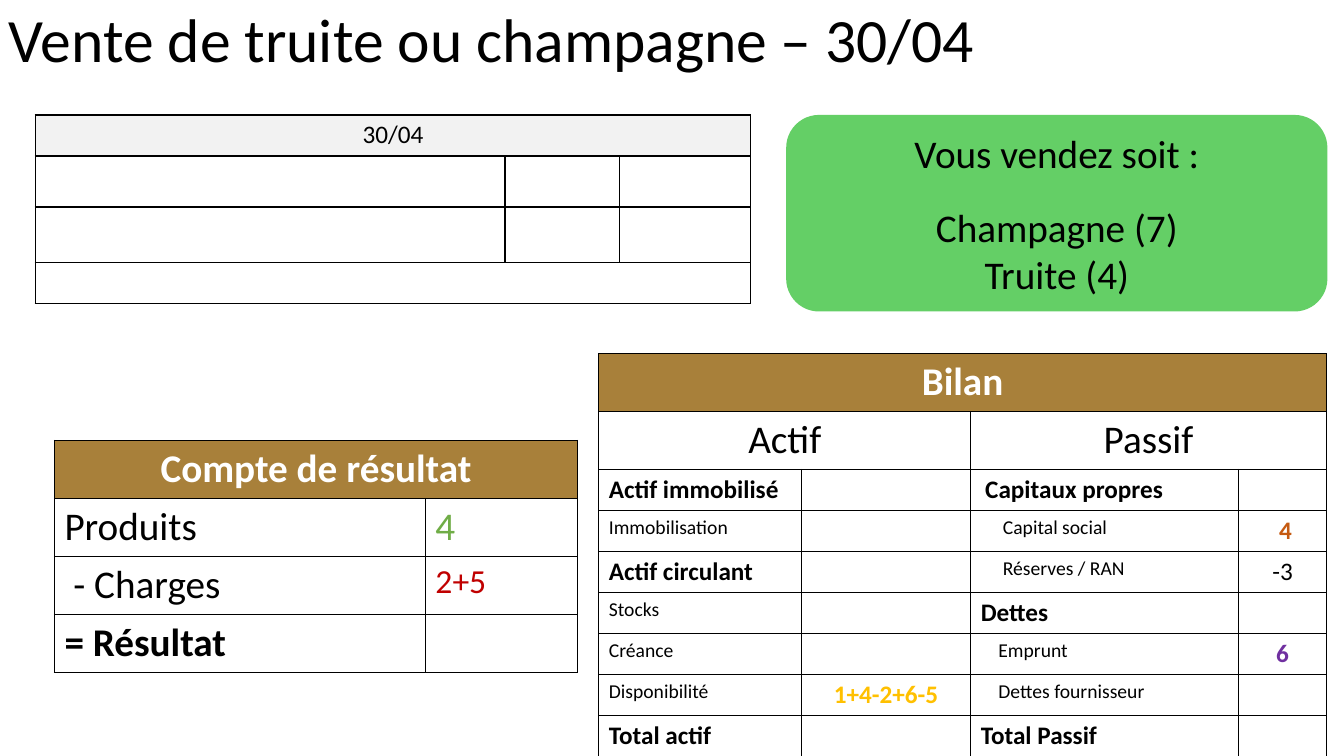
from dataclasses import dataclass

from lxml import etree
from pptx import Presentation
from pptx.dml.color import RGBColor
from pptx.enum.shapes import MSO_SHAPE
from pptx.enum.text import MSO_ANCHOR, PP_ALIGN
from pptx.oxml.ns import qn
from pptx.util import Pt

CENTER, LEFT = PP_ALIGN.CENTER, PP_ALIGN.LEFT
MIDDLE = MSO_ANCHOR.MIDDLE
ROUNDED = MSO_SHAPE.ROUNDED_RECTANGLE

BLACK = RGBColor(0x00, 0x00, 0x00)
WHITE = RGBColor(0xFF, 0xFF, 0xFF)
GREY = RGBColor(0xF2, 0xF2, 0xF2)
BROWN = RGBColor(0xA8, 0x80, 0x3A)
LIGHT_GREEN = RGBColor(0x64, 0xCF, 0x66)
GREEN = RGBColor(0x70, 0xAD, 0x47)
RED = RGBColor(0xC0, 0x00, 0x00)
ORANGE = RGBColor(0xC5, 0x5A, 0x11)
PURPLE = RGBColor(0x70, 0x30, 0xA0)
GOLD = RGBColor(0xFF, 0xC0, 0x00)

FONT = "Calibri"
CELL_MARGIN = 7.2
LARGE_ROW, SMALL_ROW = 41.4, 29.3


@dataclass
class Entry:
    """Content and look of one table cell; span counts merged columns."""
    text: str = ""
    size: float = 28
    color: RGBColor = BLACK
    bold: bool = False
    align: PP_ALIGN = LEFT
    indent: float = 0
    fill: RGBColor = None
    span: int = 1


def heading(text, span):
    return Entry(text, color=WHITE, bold=True, align=CENTER, fill=BROWN, span=span)


def section(text, indent=0):
    return Entry(text, 18, bold=True, indent=indent)


def item(text, indent=0):
    return Entry(text, 14, indent=indent)


def amount(text, color, bold=True):
    return Entry(text, 18, color, bold, CENTER)


def write(paragraph, text, size, color=BLACK, bold=False, align=LEFT):
    paragraph.alignment = align
    run = paragraph.add_run()
    run.text = text
    run.font.name = FONT
    run.font.size = Pt(size)
    run.font.bold = bold
    run.font.color.rgb = color


def add_borders(cell):
    properties = cell._tc.get_or_add_tcPr()
    for side in ("a:lnL", "a:lnR", "a:lnT", "a:lnB"):
        line = etree.SubElement(properties, qn(side), w=str(Pt(1)))
        fill = etree.SubElement(line, qn("a:solidFill"))
        etree.SubElement(fill, qn("a:srgbClr"), val=str(BLACK))


def fill_cell(cell, entry):
    cell.margin_left = Pt(CELL_MARGIN + entry.indent)
    if entry.fill is not None:
        cell.fill.solid()
        cell.fill.fore_color.rgb = entry.fill
    if entry.text:
        write(cell.text_frame.paragraphs[0], entry.text, entry.size,
              entry.color, entry.bold, entry.align)


def add_grid(slide, left, top, widths, heights, rows):
    """Draw a bordered table from rows of entries."""
    table = slide.shapes.add_table(
        len(heights), len(widths), Pt(left), Pt(top),
        Pt(sum(widths)), Pt(sum(heights))).table
    table.first_row = False
    table.horz_banding = False
    for column, width in zip(table.columns, widths):
        column.width = Pt(width)
    for row, height in zip(table.rows, heights):
        row.height = Pt(height)
    for cell in table.iter_cells():
        add_borders(cell)
        cell.fill.background()
    for row_index, entries in enumerate(rows):
        column_index = 0
        for entry in entries:
            cell = table.cell(row_index, column_index)
            column_index += entry.span
            if entry.span > 1:
                cell.merge(table.cell(row_index, column_index - 1))
            fill_cell(cell, entry)


def add_title(slide, text):
    box = slide.shapes.add_textbox(Pt(-0.7), Pt(-21.6), Pt(922.3), Pt(104.4))
    frame = box.text_frame
    frame.word_wrap = True
    frame.vertical_anchor = MIDDLE
    paragraph = frame.paragraphs[0]
    paragraph.line_spacing = 0.9
    write(paragraph, text, 44)


def add_choice_card(slide, lead, choices):
    card = slide.shapes.add_shape(ROUNDED, Pt(561.6), Pt(82.1), Pt(386.6), Pt(140.4))
    card.shadow.inherit = False
    card.fill.solid()
    card.fill.fore_color.rgb = LIGHT_GREEN
    card.line.fill.background()
    frame = card.text_frame
    frame.word_wrap = True
    frame.vertical_anchor = MIDDLE
    write(frame.paragraphs[0], lead, 28, align=CENTER)
    for index, choice in enumerate(choices):
        paragraph = frame.add_paragraph()
        if index == 0:
            paragraph.space_before = Pt(19.5)
        write(paragraph, choice, 28, align=CENTER)


def main():
    presentation = Presentation()
    presentation.slide_width, presentation.slide_height = Pt(960), Pt(540)
    slide = presentation.slides.add_slide(presentation.slide_layouts[6])
    empty = Entry()

    add_title(slide, "Vente de truite ou champagne – 30/04")

    journal = [
        [Entry("30/04", 18, align=CENTER, fill=GREY, span=3)],
        [empty] * 3,
        [empty] * 3,
        [Entry(span=3)],
    ]
    add_grid(slide, 25.2, 82.1, [335.5, 82, 93.6],
             [SMALL_ROW, 36.5, 39.8, SMALL_ROW], journal)

    income_statement = [
        [heading("Compte de résultat", 2)],
        [Entry("Produits"), Entry("4", color=GREEN)],
        [Entry(" - Charges"), Entry("2+5", 24, RED)],
        [Entry("= Résultat", bold=True), empty],
    ]
    add_grid(slide, 38.9, 314.6, [265, 108.7], [LARGE_ROW] * 4, income_statement)

    balance_sheet = [
        [heading("Bilan", 4)],
        [Entry("Actif", align=CENTER, span=2), Entry("Passif", align=CENTER, span=2)],
        [section("Actif immobilisé"), empty, section("Capitaux propres", 3.2), empty],
        [item("Immobilisation"), empty, item("Capital social", 15.8),
         amount(" 4", ORANGE)],
        [section("Actif circulant"), empty, item("Réserves / RAN", 15.8),
         amount("-3", BLACK, bold=False)],
        [item("Stocks"), empty, section("Dettes"), empty],
        [item("Créance"), empty, item("Emprunt", 12.6), amount("6", PURPLE)],
        [item("Disponibilité"), amount("1+4-2+6-5", GOLD),
         item("Dettes fournisseur", 12.6), empty],
        [section("Total actif"), empty, section("Total Passif"), empty],
    ]
    add_grid(slide, 427.7, 252.6, [144.7, 121, 191.5, 62.6],
             [LARGE_ROW] * 2 + [SMALL_ROW] * 7, balance_sheet)

    add_choice_card(slide, "Vous vendez soit :", ["Champagne (7)", "Truite (4)"])
    presentation.save("out.pptx")


if __name__ == "__main__":
    main()
